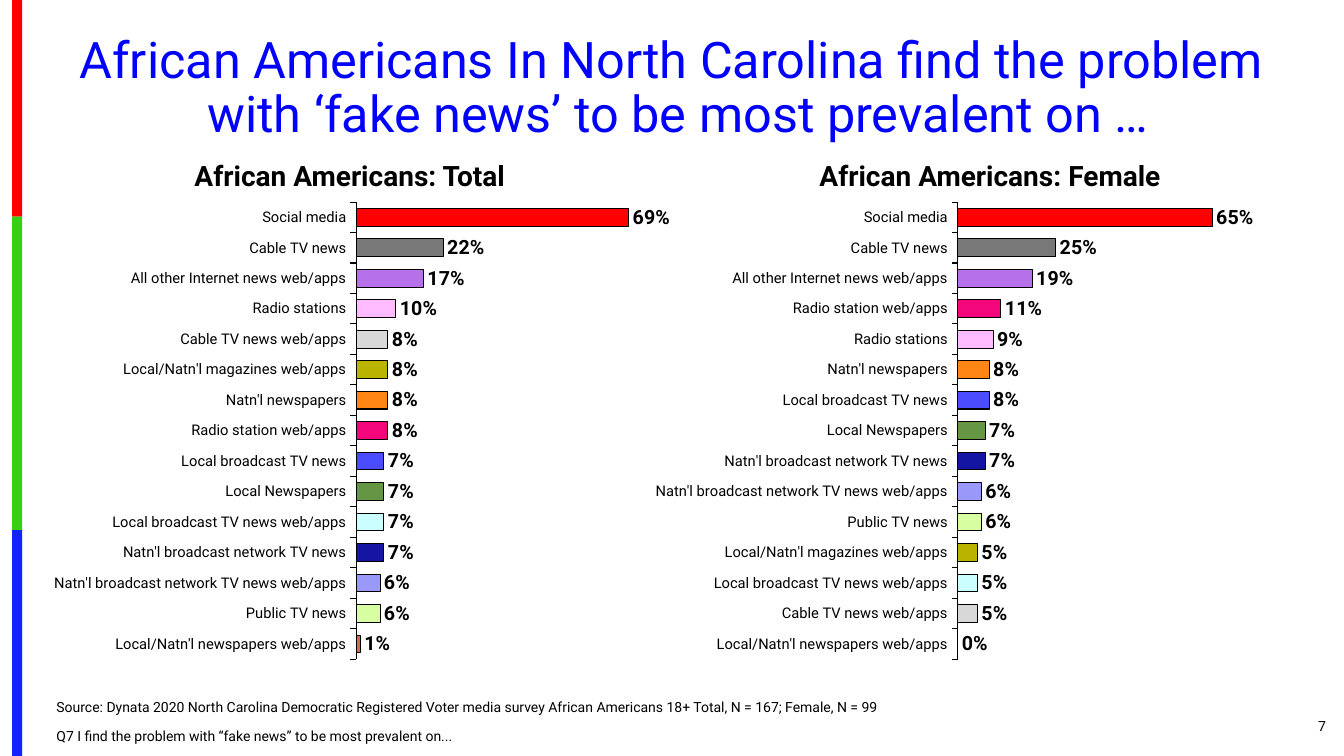
from lxml.etree import SubElement
from pptx import Presentation
from pptx.chart.data import CategoryChartData
from pptx.dml.color import RGBColor
from pptx.enum.chart import XL_CHART_TYPE, XL_LABEL_POSITION, XL_TICK_MARK
from pptx.enum.shapes import MSO_SHAPE
from pptx.enum.text import MSO_ANCHOR, MSO_AUTO_SIZE, PP_ALIGN
from pptx.oxml.ns import qn
from pptx.util import Inches, Pt

FONT = "Roboto"
COLORS = {"title": "0000FF", "text": "000000", "red": "FE0000", "green": "36CF12", "blue": "1322FE"}
MEDIA_COLORS = {
    "Social media": "FF0000",
    "Cable TV news": "787878",
    "All other Internet news web/apps": "B671EA",
    "Radio stations": "FFBBFF",
    "Radio station web/apps": "F3057C",
    "Cable TV news web/apps": "D8D8D8",
    "Local/Natn'l magazines web/apps": "B8B400",
    "Natn'l newspapers": "FF8615",
    "Local broadcast TV news": "4C4CFF",
    "Local Newspapers": "659643",
    "Local broadcast TV news web/apps": "CBFFFF",
    "Natn'l broadcast network TV news": "1515A3",
    "Natn'l broadcast network TV news web/apps": "9999F9",
    "Public TV news": "D7FFA1",
    "Local/Natn'l newspapers web/apps": "CA704B",
}
# Percentages run from the bottom bar to the top bar.
TOTAL = {
    "Local/Natn'l newspapers web/apps": 1,
    "Public TV news": 6,
    "Natn'l broadcast network TV news web/apps": 6,
    "Natn'l broadcast network TV news": 7,
    "Local broadcast TV news web/apps": 7,
    "Local Newspapers": 7,
    "Local broadcast TV news": 7,
    "Radio station web/apps": 8,
    "Natn'l newspapers": 8,
    "Local/Natn'l magazines web/apps": 8,
    "Cable TV news web/apps": 8,
    "Radio stations": 10,
    "All other Internet news web/apps": 17,
    "Cable TV news": 22,
    "Social media": 69,
}
FEMALE = {
    "Local/Natn'l newspapers web/apps": 0,
    "Cable TV news web/apps": 5,
    "Local broadcast TV news web/apps": 5,
    "Local/Natn'l magazines web/apps": 5,
    "Public TV news": 6,
    "Natn'l broadcast network TV news web/apps": 6,
    "Natn'l broadcast network TV news": 7,
    "Local Newspapers": 7,
    "Local broadcast TV news": 8,
    "Natn'l newspapers": 8,
    "Radio stations": 9,
    "Radio station web/apps": 11,
    "All other Internet news web/apps": 19,
    "Cable TV news": 25,
    "Social media": 65,
}


def place(shape, left, top, width, height):
    shape.left, shape.top = Inches(left), Inches(top)
    shape.width, shape.height = Inches(width), Inches(height)


def style_font(font, size, color="text", bold=False):
    for name, value in {"name": FONT, "size": Pt(size), "bold": bold}.items():
        setattr(font, name, value)
    font.color.rgb = RGBColor.from_string(COLORS[color])


def write(box, lines, size, color="text", bold=False, align=PP_ALIGN.LEFT,
          anchor=MSO_ANCHOR.TOP, line_spacing=1.0, gap=0):
    """Fill a box with one paragraph per line, without bullets."""
    frame = box.text_frame
    frame.word_wrap = True
    frame.auto_size = MSO_AUTO_SIZE.NONE
    frame.vertical_anchor = anchor
    frame.text = "\n".join(lines)
    for index, para in enumerate(frame.paragraphs):
        para.alignment = align
        para.line_spacing = line_spacing
        para.space_before = Pt(gap if index else 0)
        properties = para._p.get_or_add_pPr()
        properties.set("marL", "0")
        properties.set("indent", "0")
        SubElement(properties, qn("a:buNone"))
        for span in para.runs:
            style_font(span.font, size, color, bold)


def add_text(slide, text, at, size, **formats):
    box = slide.shapes.add_textbox(*map(Inches, at))
    write(box, [text], size, **formats)


def add_side_stripe(slide, top, bottom, color):
    stripe = slide.shapes.add_shape(
        MSO_SHAPE.RECTANGLE, Inches(0.12), Inches(top), Inches(0.1), Inches(bottom - top))
    stripe.shadow.inherit = False
    stripe.fill.solid()
    stripe.fill.fore_color.rgb = RGBColor.from_string(COLORS[color])
    stripe.line.fill.background()


def outline(line):
    line.color.rgb = RGBColor.from_string(COLORS["text"])
    line.width = Pt(0.75)


def set_plot_layout(chart, **edges):
    plot_area = chart._chartSpace.chart.plotArea
    for old in plot_area.findall(qn("c:layout")):
        plot_area.remove(old)
    layout = plot_area.makeelement(qn("c:layout"))
    plot_area.insert(0, layout)
    manual = SubElement(layout, qn("c:manualLayout"))
    settings = {"layoutTarget": "inner", "xMode": "edge", "yMode": "edge", **edges}
    for name, value in settings.items():
        SubElement(manual, qn(f"c:{name}")).set("val", str(value))


def add_media_chart(slide, left, percentages, plot_left, plot_width):
    data = CategoryChartData(number_format="0%")
    data.categories = list(percentages)
    data.add_series("Series 1", [percent / 100 for percent in percentages.values()])
    chart = slide.shapes.add_chart(
        XL_CHART_TYPE.BAR_CLUSTERED, Inches(left), Inches(1.87), Inches(6.75), Inches(4.81), data).chart
    chart.has_legend = chart.has_title = False
    style_font(chart.font, 10)
    set_plot_layout(chart, x=plot_left, y=0.028, w=plot_width, h=0.943)

    values = chart.value_axis
    values.minimum_scale, values.maximum_scale = -0.05, 0.75
    values.has_major_gridlines = values.visible = False
    categories = chart.category_axis
    categories.major_tick_mark = XL_TICK_MARK.OUTSIDE
    style_font(categories.tick_labels.font, 10.5)
    outline(categories.format.line)

    plot = chart.plots[0]
    plot.gap_width = 72
    plot.vary_by_categories = False
    series = plot.series[0]
    for index, medium in enumerate(percentages):
        bar = series.points[index].format
        bar.fill.solid()
        bar.fill.fore_color.rgb = RGBColor.from_string(MEDIA_COLORS[medium])
        outline(bar.line)
    labels = series.data_labels
    label_formats = {"show_value": True, "number_format": "0%", "number_format_is_linked": False,
                     "position": XL_LABEL_POSITION.OUTSIDE_END}
    for name, value in label_formats.items():
        setattr(labels, name, value)
    style_font(labels.font, 14, bold=True)


def main():
    deck = Presentation()
    deck.slide_width, deck.slide_height = Inches(13.33), Inches(7.5)
    slide = deck.slides.add_slide(deck.slide_layouts[1])
    title, sources = slide.placeholders

    for top, bottom, color in [(0, 2.15, "red"), (2.15, 5.26, "green"), (5.26, 7.5, "blue")]:
        add_side_stripe(slide, top, bottom, color)

    place(title, 0.2, 0.29, 13.05, 1.19)
    write(title, ["African Americans In North Carolina find the problem \v"
                  "with ‘fake news’ to be most prevalent on …"],
          36, color="title", align=PP_ALIGN.CENTER, anchor=MSO_ANCHOR.MIDDLE, line_spacing=0.9)
    place(sources, 0.46, 6.9, 11.02, 0.54)
    write(sources, ["Source: Dynata 2020 North Carolina Democratic Registered Voter media survey "
                    "African Americans 18+ Total, N = 167; Female, N = 99",
                    "Q7 I find the problem with “fake news” to be most prevalent on..."],
          10, anchor=MSO_ANCHOR.BOTTOM, line_spacing=0.9, gap=10)
    add_text(slide, "7", (12.17, 7, 1.08, 0.4), 10, align=PP_ALIGN.RIGHT, anchor=MSO_ANCHOR.MIDDLE)

    for heading, left, width in [("Total", 1.64, 3.66), ("Female", 7.68, 4.28)]:
        add_text(slide, f"African Americans: {heading}", (left, 1.52, width, 0.44), 20,
                 bold=True, align=PP_ALIGN.CENTER)
    add_media_chart(slide, 6.37, FEMALE, 0.435, 0.46)
    add_media_chart(slide, 0.43, TOTAL, 0.431, 0.464)
    deck.save("out.pptx")


if __name__ == "__main__":
    main()
